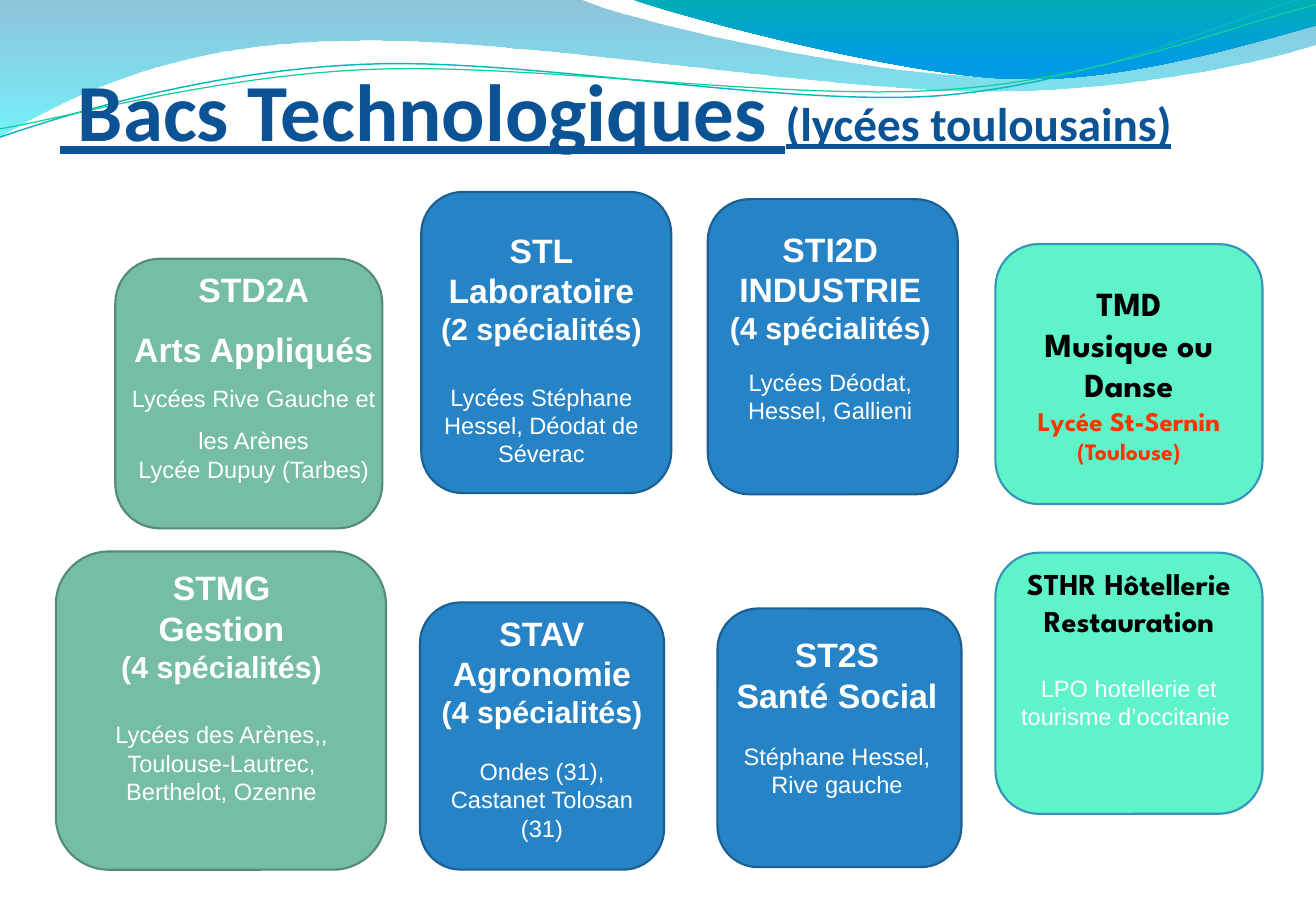
from dataclasses import dataclass
from typing import Optional

from lxml.etree import SubElement
from pptx import Presentation
from pptx.dml.color import RGBColor
from pptx.enum.shapes import MSO_SHAPE as Preset
from pptx.enum.text import MSO_ANCHOR as Anchor, MSO_AUTO_SIZE as AutoSize, PP_ALIGN as Align
from pptx.oxml.ns import qn
from pptx.util import Inches, Pt

WHITE = RGBColor(0xFF, 0xFF, 0xFF)
BLACK = RGBColor(0, 0, 0)
RED = RGBColor(0xFF, 0x33, 0x00)
NAVY = RGBColor(0x0B, 0x53, 0x95)
BLUE = RGBColor(0x26, 0x83, 0xC6)
BLUE_EDGE = RGBColor(0x19, 0x5F, 0x91)
GREEN = RGBColor(0x75, 0xBD, 0xA7)
GREEN_EDGE = RGBColor(0x54, 0x8A, 0x7A)
MINT = RGBColor(0x5F, 0xF3, 0xCA)
MINT_EDGE = RGBColor(0x34, 0x94, 0xBA)
SKY_TOP = RGBColor(0x00, 0x79, 0xAF)
SKY_BOTTOM = RGBColor(0x00, 0xEB, 0xF8)
SEA_TOP = RGBColor(0x00, 0xAD, 0xB6)
SEA_BOTTOM = RGBColor(0x00, 0x9B, 0xE5)
TEAL = RGBColor(0x09, 0xB6, 0xBE)
EMERALD = RGBColor(0x10, 0xCF, 0x9B)
SPARTAN = "League Spartan"

Point = tuple[float, float]
Curve = tuple[Point, ...]
Frame = tuple[float, float, float, float]


@dataclass(frozen=True)
class Wave:
    curves: tuple[Curve, ...]
    stops: tuple[tuple[float, RGBColor, int], ...]


@dataclass(frozen=True)
class Strand:
    curve: Curve
    color: RGBColor
    width: float


@dataclass(frozen=True)
class Para:
    text: str
    size: int
    bold: bool = True
    color: RGBColor = WHITE
    font: str = "Arial"
    before: float = 0
    spacing: float = 1
    tail: Optional[tuple[str, int]] = None


@dataclass(frozen=True)
class Card:
    frame: Frame
    fill: RGBColor
    edge: RGBColor
    paras: tuple[Para, ...]
    text_frame: Optional[Frame] = None
    anchor: Anchor = Anchor.TOP


WAVES = (
    Wave((((0, -0.01),),
          ((4.77, -0.01), (5.15, 0.17), (7.19, 0.63), (8.22, 0.63),
           (9.24, 0.63), (10.38, 0.26), (10.84, 0.09)),
          ((10.85, 0.36), (10.66, 0.44), (9.42, 0.76), (8.08, 0.75),
           (6.74, 0.75), (4.14, 0.28), (2.79, 0.34),
           (1.4, 0.35), (0.5, 0.83), (-0.01, 1.13))),
         ((0, SKY_TOP, 44), (1, SKY_BOTTOM, 55))),
    Wave((((5.19, -0.01), (5.52, 0.11), (7.39, 0.62), (8.33, 0.65),
           (9.27, 0.69), (10.42, 0.32), (10.84, 0.21)),
          ((10.84, 0),)),
         ((0, SEA_TOP, 100), (0.8, SEA_BOTTOM, 100))),
)
STRANDS = (
    Strand(((0, 1.13), (0.52, 0.95), (1.71, 0.58), (3, 0.53), (4.28, 0.47), (6.42, 0.88),
            (7.72, 0.79), (9.02, 0.69), (10.17, 0.14), (10.81, -0.04)), TEAL, 0.85),
    Strand(((0, 1.06), (0.51, 0.98), (1.77, 0.62), (3.07, 0.57), (4.36, 0.52), (6.47, 0.83),
            (7.77, 0.74), (9.06, 0.66), (10.2, 0.19), (10.84, 0.04)), EMERALD, 0.75),
)
CARDS = (
    Card((8.2, 4.55, 2.2, 2.15), MINT, MINT_EDGE, (
        Para("STHR Hôtellerie Restauration", 18, color=BLACK, font=SPARTAN),
        Para("LPO hotellerie et tourisme d’occitanie ", 14, False, before=21))),
    Card((8.2, 2.01, 2.2, 2.14), MINT, MINT_EDGE, (
        Para("TMD", 20, color=BLACK, font=SPARTAN),
        Para("Musique ou Danse", 20, color=BLACK, font=SPARTAN),
        Para("Lycée St-Sernin ", 16, color=RED, font=SPARTAN, tail=("(Toulouse)", 14))),
        anchor=Anchor.MIDDLE),
    Card((5.83, 1.64, 2.06, 2.43), BLUE, BLUE_EDGE, (
        Para("STI2D", 20), Para("INDUSTRIE", 20), Para("(4 spécialités)", 18),
        Para("Lycées Déodat, Hessel, Gallieni", 14, False, before=13)),
        (5.81, 1.83, 2.06, 1.85)),
    Card((3.47, 1.58, 2.06, 2.48), BLUE, BLUE_EDGE, (
        Para("STL", 20), Para("Laboratoire", 20), Para("(2 spécialités)", 18),
        Para("Lycées Stéphane Hessel, Déodat de Séverac", 14, False, before=21)),
        (3.39, 1.84, 2.14, 2.09)),
    Card((3.46, 4.96, 2.01, 2.2), BLUE, BLUE_EDGE, (
        Para("STAV", 20), Para("Agronomie", 20), Para("(4 spécialités)", 18),
        Para("Ondes (31), Castanet Tolosan (31)", 14, False, before=16)),
        (3.46, 4.96, 2.01, 2.02), Anchor.BOTTOM),
    Card((5.91, 5.01, 2.01, 2.13), BLUE, BLUE_EDGE, (
        Para("ST2S", 20), Para("Santé Social", 20),
        Para("Stéphane Hessel, Rive gauche", 14, False, before=16)),
        (5.89, 5.17, 2.01, 1.48)),
    Card((0.95, 2.13, 2.2, 2.22), GREEN, GREEN_EDGE, (
        Para("STD2A", 20), Para("Arts Appliqués", 20, spacing=1.5),
        Para("Lycées Rive Gauche et les Arènes", 14, False, spacing=1.5),
        Para("Lycée Dupuy (Tarbes)", 14, False)),
        (0.97, 2.16, 2.24, 2.15)),
    Card((0.46, 4.54, 2.72, 2.62), GREEN, GREEN_EDGE, (
        Para("STMG", 20), Para("Gestion", 20), Para("(4 spécialités)", 18),
        Para("Lycées des Arènes,, Toulouse-Lautrec, Berthelot, Ozenne", 14, False, before=21)),
        (0.52, 4.62, 2.61, 2.09)),
)


def sample(curve: Curve, steps: int = 24) -> list[Point]:
    """Turn a chain of cubic Bézier segments into points."""
    points = [curve[0]]
    for first in range(0, len(curve) - 1, 3):
        a, b, c, d = curve[first:first + 4]
        for step in range(1, steps + 1):
            t = step / steps
            u = 1 - t
            weights = (u ** 3, 3 * u * u * t, 3 * u * t * t, t ** 3)
            points.append(tuple(sum(w * p[axis] for w, p in zip(weights, (a, b, c, d)))
                                for axis in (0, 1)))
    return points


def draw_outline(page, points: list[Point], close: bool):
    corners = [(Inches(x), Inches(y)) for x, y in points]
    builder = page.shapes.build_freeform(*corners[0], scale=1.0)
    builder.add_line_segments(corners[1:], close=close)
    shape = builder.convert_to_shape()
    shape.shadow.inherit = False
    return shape


def draw_wave(page, wave: Wave) -> None:
    shape = draw_outline(page, [p for curve in wave.curves for p in sample(curve)], True)
    shape.line.fill.background()
    shape.fill.gradient()
    shape.fill.gradient_angle = 270
    for stop, (position, color, _) in zip(shape.fill.gradient_stops, wave.stops):
        stop.position = position
        stop.color.rgb = color
    tints = shape.element.spPr.findall(".//" + qn("a:srgbClr"))
    for tint, (_, _, opacity) in zip(tints, wave.stops):
        SubElement(tint, qn("a:alpha")).set("val", str(opacity * 1000))


def draw_strand(page, strand: Strand) -> None:
    shape = draw_outline(page, sample(strand.curve), False)
    shape.fill.background()
    shape.line.color.rgb = strand.color
    shape.line.width = Pt(strand.width)


def write(frame, paras: tuple[Para, ...]) -> None:
    for index, para in enumerate(paras):
        paragraph = frame.paragraphs[0] if index == 0 else frame.add_paragraph()
        paragraph.alignment = Align.CENTER
        paragraph.line_spacing = para.spacing
        paragraph.space_before = Pt(para.before)
        font = paragraph.font
        font.name, font.size, font.bold = para.font, Pt(para.size), para.bold
        font.color.rgb = para.color
        paragraph.add_run().text = para.text
        if para.tail:
            span = paragraph.add_run()
            span.text, span.font.size = para.tail[0], Pt(para.tail[1])


def draw_card(page, card: Card) -> None:
    shapes = page.shapes.add_group_shape().shapes if card.text_frame else page.shapes
    box = shapes.add_shape(Preset.ROUNDED_RECTANGLE, *map(Inches, card.frame))
    box.shadow.inherit = False
    box.fill.solid()
    box.fill.fore_color.rgb = card.fill
    box.line.color.rgb = card.edge
    box.line.width = Pt(1.25)
    if card.text_frame:
        box = shapes.add_textbox(*map(Inches, card.text_frame))
    else:
        frame = box.text_frame
        frame.margin_left = frame.margin_right = frame.margin_top = frame.margin_bottom = 0
    box.text_frame.word_wrap = True
    box.text_frame.vertical_anchor = card.anchor
    write(box.text_frame, card.paras)


def place_title(page) -> None:
    title = page.shapes.title
    title.left, title.top, title.width, title.height = map(Inches, (0.42, 0.44, 9.3, 0.86))
    frame = title.text_frame
    frame.auto_size = AutoSize.NONE
    frame.vertical_anchor = Anchor.BOTTOM
    frame.margin_left = frame.margin_right = frame.margin_bottom = 0
    write(frame, (Para(" Bacs Technologiques ", 48, color=NAVY, font="Calibri",
                       tail=("(lycées toulousains)", 28)),))
    frame.paragraphs[0].font.underline = True
    page.shapes.element.append(title.element)


def main() -> None:
    deck = Presentation()
    deck.slide_width, deck.slide_height = Inches(10.84), Inches(7.5)
    page = deck.slides.add_slide(deck.slide_layouts.get_by_name("Title Only"))
    for wave in WAVES:
        draw_wave(page, wave)
    for strand in STRANDS:
        draw_strand(page, strand)
    place_title(page)
    for card in CARDS:
        draw_card(page, card)
    deck.save("out.pptx")


if __name__ == "__main__":
    main()
